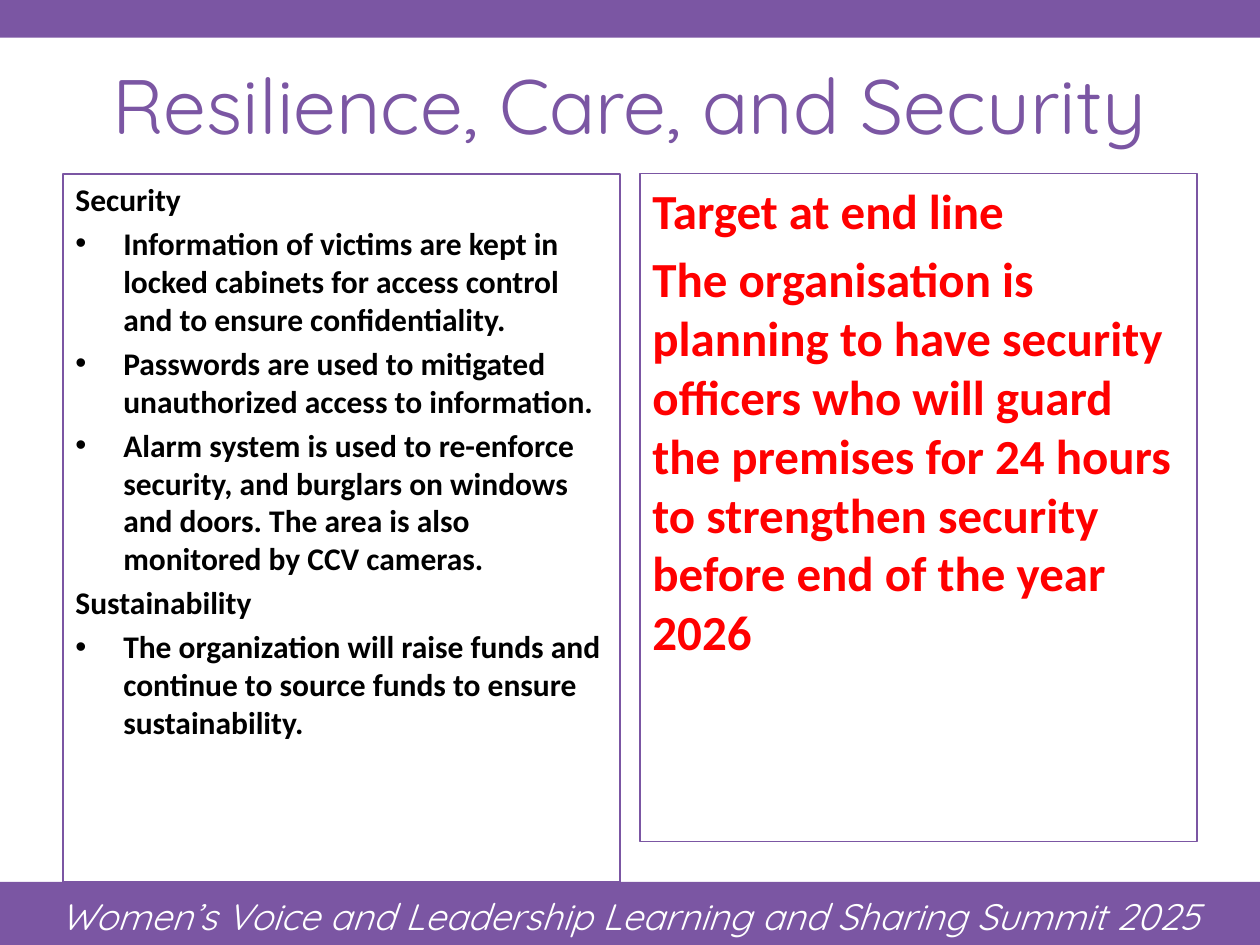
from pptx import Presentation
from pptx.dml.color import RGBColor
from pptx.enum.shapes import MSO_SHAPE
from pptx.enum.text import MSO_ANCHOR, PP_ALIGN
from pptx.oxml.ns import qn
from pptx.util import Inches, Pt
from lxml.etree import SubElement

WIDE, HIGH = 10, 7.5
HEAD, FOOT = 0.3, 0.5  # bar heights
EDGE, GAP = 0.5, 0.16  # side margin and gap between the panels
COL = (WIDE - 2 * EDGE - GAP) / 2
TOP = 1.38
HANG = 0.38

HUES = {"purple": "7B56A3", "white": "FFFFFF", "black": "000000", "red": "FF0000"}

FONTS = {
    "title": {"name": "Quicksand", "size": Pt(44), "hue": "purple"},
    "foot": {"name": "Quicksand", "size": Pt(21), "italic": True, "hue": "white"},
    "body": {"name": "Calibri", "size": Pt(18), "bold": True, "hue": "black"},
    "goal": {"name": "Calibri", "size": Pt(28), "bold": True, "hue": "red"},
}

# Each entry: (text, has bullet)
STEPS = [
    ("Security", False),
    ("Information of victims are kept in locked cabinets for access control "
     "and to ensure confidentiality.", True),
    ("Passwords are used to mitigated unauthorized access to information.", True),
    ("Alarm system is used to re-enforce security, and burglars on windows and doors. "
     "The area is also monitored by CCV cameras.", True),
    ("Sustainability", False),
    ("The organization will raise funds and continue to source funds "
     "to ensure sustainability.", True),
]
GOALS = [
    ("Target at end line", False),
    ("The organisation is planning to have security officers who will guard the premises "
     "for 24 hours to strengthen security before end of the year 2026", False),
]


def tint(name):
    return RGBColor.from_string(HUES[name])


def style(run, kind):
    for key, value in FONTS[kind].items():
        if key == "hue":
            run.font.color.rgb = tint(value)
        else:
            setattr(run.font, key, value)


def bullet(para):
    props = para._p.get_or_add_pPr()
    props.set("marL", str(Inches(HANG)))
    props.set("indent", str(-Inches(HANG)))
    SubElement(props, qn("a:buFont")).set("typeface", "Arial")
    SubElement(props, qn("a:buChar")).set("char", "•")


def block(slide, area):
    shape = slide.shapes.add_shape(MSO_SHAPE.RECTANGLE, *map(Inches, area))
    shape.shadow.inherit = False
    return shape


def bar(slide, top, high):
    shape = block(slide, (0, top, WIDE, high))
    shape.fill.solid()
    shape.fill.fore_color.rgb = tint("purple")
    shape.line.fill.background()


def label(slide, area, text, kind, anchor, pitch=1):
    frame = slide.shapes.add_textbox(*map(Inches, area)).text_frame
    frame.word_wrap = True
    frame.vertical_anchor = anchor
    para = frame.paragraphs[0]
    para.alignment = PP_ALIGN.CENTER
    para.line_spacing = pitch
    run = para.add_run()
    run.text = text
    style(run, kind)


def panel(slide, col, high, items, kind):
    shape = block(slide, (EDGE + col * (COL + GAP), TOP, COL, high))
    shape.fill.background()
    shape.line.color.rgb = tint("purple")
    shape.line.width = Pt(0.75)
    frame = shape.text_frame
    frame.word_wrap = True
    frame.vertical_anchor = MSO_ANCHOR.TOP
    for i, (text, dot) in enumerate(items):
        para = frame.add_paragraph() if i else frame.paragraphs[0]
        para.alignment = PP_ALIGN.LEFT
        para.space_before = Pt(FONTS[kind]["size"].pt * 0.2)
        if dot:
            bullet(para)
        run = para.add_run()
        run.text = text
        style(run, kind)


def main():
    deck = Presentation()
    deck.slide_width, deck.slide_height = Inches(WIDE), Inches(HIGH)
    slide = deck.slides.add_slide(deck.slide_layouts[6])

    # Bars with the footer line
    bar(slide, HIGH - FOOT, FOOT)
    bar(slide, 0, HEAD)
    label(slide, (0.17, 7.02, WIDE - 0.34, 0.48),
          "Women’s Voice and Leadership Learning and Sharing Summit 2025",
          "foot", MSO_ANCHOR.TOP, 1.07)

    # Title
    label(slide, (0, 0.36, WIDE, 0.92), "Resilience, Care, and Security",
          "title", MSO_ANCHOR.MIDDLE)

    # Two text panels
    panel(slide, 0, HIGH - FOOT - TOP, STEPS, "body")
    panel(slide, 1, 5.3, GOALS, "goal")

    deck.save("out.pptx")


if __name__ == "__main__":
    main()
